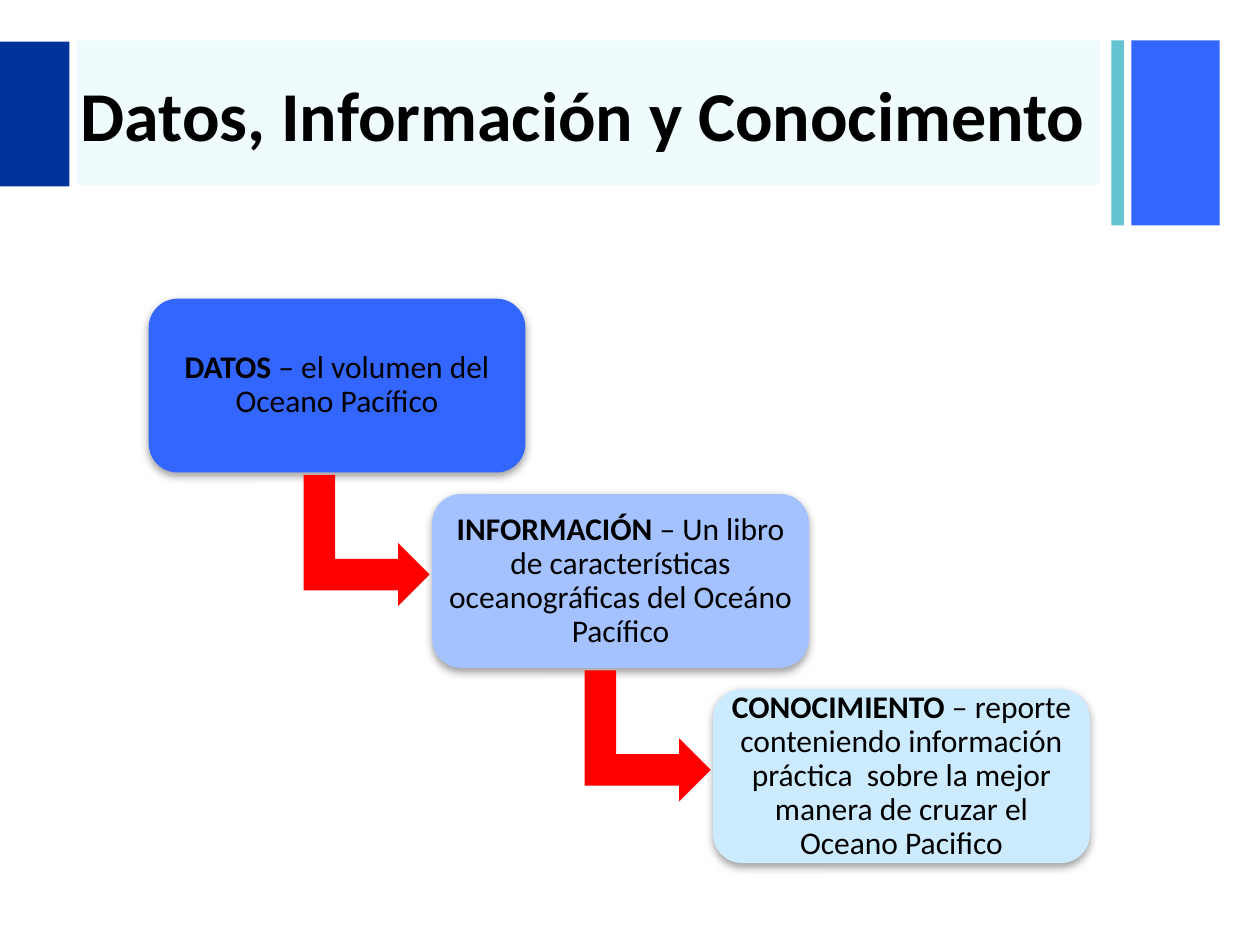
from dataclasses import dataclass

from lxml.etree import SubElement
from pptx import Presentation
from pptx.dml.color import RGBColor
from pptx.enum.shapes import MSO_SHAPE
from pptx.enum.text import MSO_ANCHOR, PP_ALIGN
from pptx.oxml.ns import qn
from pptx.util import Inches, Pt

BLACK = RGBColor(0x00, 0x00, 0x00)
BLUE = RGBColor(0x33, 0x66, 0xFF)
NAVY = RGBColor(0x00, 0x33, 0x99)
TEAL = RGBColor(0x65, 0xC4, 0xD2)
PALE_TEAL = RGBColor(0xEF, 0xFB, 0xFC)
PERIWINKLE = RGBColor(0xA3, 0xC2, 0xFF)
ICE = RGBColor(0xCC, 0xEB, 0xFF)
RED = RGBColor(0xFF, 0x00, 0x00)

CARD_WIDTH, CARD_HEIGHT = 2.99, 1.38
CARD_TOP, CARD_STEP = 2.37, 1.55
ARROW_LENGTH, ARROW_WIDTH = 1.04, 1.0


@dataclass
class Band:
    left: float
    top: float
    width: float
    height: float
    color: RGBColor


@dataclass
class Card:
    left: float
    color: RGBColor
    term: str
    meaning: str


BANDS = [
    Band(8.98, 0.32, 0.7, 1.47, BLUE),
    Band(8.82, 0.32, 0.1, 1.47, TEAL),
    Band(0.61, 0.32, 8.12, 1.15, PALE_TEAL),
    Band(0, 0.33, 0.55, 1.15, NAVY),
]

CARDS = [
    Card(1.18, BLUE, "DATOS", " – el volumen del Oceano Pacífico"),
    Card(3.43, PERIWINKLE, "INFORMACIÓN",
         " – Un libro de características oceanográficas del Oceáno Pacífico"),
    Card(5.66, ICE, "CONOCIMIENTO",
         " – reporte conteniendo información práctica  sobre la mejor manera "
         "de cruzar el Oceano Pacifico"),
]


def add_span(para, text: str, *, size: float, bold: bool = False,
             color: RGBColor = BLACK, name: str = "Calibri") -> None:
    span = para.add_run()
    span.text = text
    span.font.size = Pt(size)
    span.font.bold = bold
    span.font.name = name
    span.font.color.rgb = color


def add_filled(page, kind: MSO_SHAPE, left: float, top: float, width: float,
               height: float, color: RGBColor):
    shape = page.shapes.add_shape(kind, Inches(left), Inches(top),
                                  Inches(width), Inches(height))
    shape.shadow.inherit = False
    shape.fill.solid()
    shape.fill.fore_color.rgb = color
    shape.line.fill.background()
    return shape


def add_soft_shadow(shape) -> None:
    effects = shape._element.spPr.find(qn("a:effectLst"))
    shadow = SubElement(effects, qn("a:outerShdw"), blurRad=str(Pt(5)),
                        dist=str(Pt(2)), dir="5400000", rotWithShape="0")
    color = SubElement(shadow, qn("a:srgbClr"), val="808080")
    SubElement(color, qn("a:alpha"), val="75000")


def add_title(page, text: str) -> None:
    title = page.shapes.title
    title.left, title.top = Inches(0.54), Inches(0.34)
    title.width, title.height = Inches(8.27), Inches(1.12)
    title.text_frame.vertical_anchor = MSO_ANCHOR.MIDDLE
    para = title.text_frame.paragraphs[0]
    para.alignment = PP_ALIGN.LEFT
    add_span(para, text, size=40, bold=True)


def add_card(page, card: Card, top: float) -> None:
    box = add_filled(page, MSO_SHAPE.ROUNDED_RECTANGLE, card.left, top,
                     CARD_WIDTH, CARD_HEIGHT, card.color)
    add_soft_shadow(box)
    frame = box.text_frame
    frame.word_wrap = True
    frame.vertical_anchor = MSO_ANCHOR.MIDDLE
    frame.margin_left = frame.margin_right = Inches(0.06)
    frame.margin_top = frame.margin_bottom = Inches(0.06)
    para = frame.paragraphs[0]
    para.alignment = PP_ALIGN.CENTER
    para.line_spacing = 0.9
    add_span(para, card.term, size=18, bold=True)
    add_span(para, card.meaning, size=18)


def add_arrow_into(page, card: Card, top: float) -> None:
    arrow = add_filled(page, MSO_SHAPE.BENT_UP_ARROW, card.left - ARROW_LENGTH,
                       top - 0.13, ARROW_LENGTH, ARROW_WIDTH, RED)
    arrow.rotation = 90


def main() -> None:
    deck = Presentation()
    deck.slide_width, deck.slide_height = Inches(10), Inches(7.5)
    page = deck.slides.add_slide(deck.slide_layouts[5])

    # Header bands, with the title brought in front of them
    for band in BANDS:
        add_filled(page, MSO_SHAPE.RECTANGLE, band.left, band.top,
                   band.width, band.height, band.color)
    add_title(page, "Datos, Información y Conocimento")
    page.shapes._spTree.append(page.shapes.title._element)

    # Staircase of cards, each one after the first reached by an arrow
    tops = [CARD_TOP + CARD_STEP * step for step in range(len(CARDS))]
    for card, top in zip(CARDS, tops):
        add_card(page, card, top)
    for card, top in zip(CARDS[1:], tops[1:]):
        add_arrow_into(page, card, top)

    deck.save("out.pptx")


if __name__ == "__main__":
    main()
